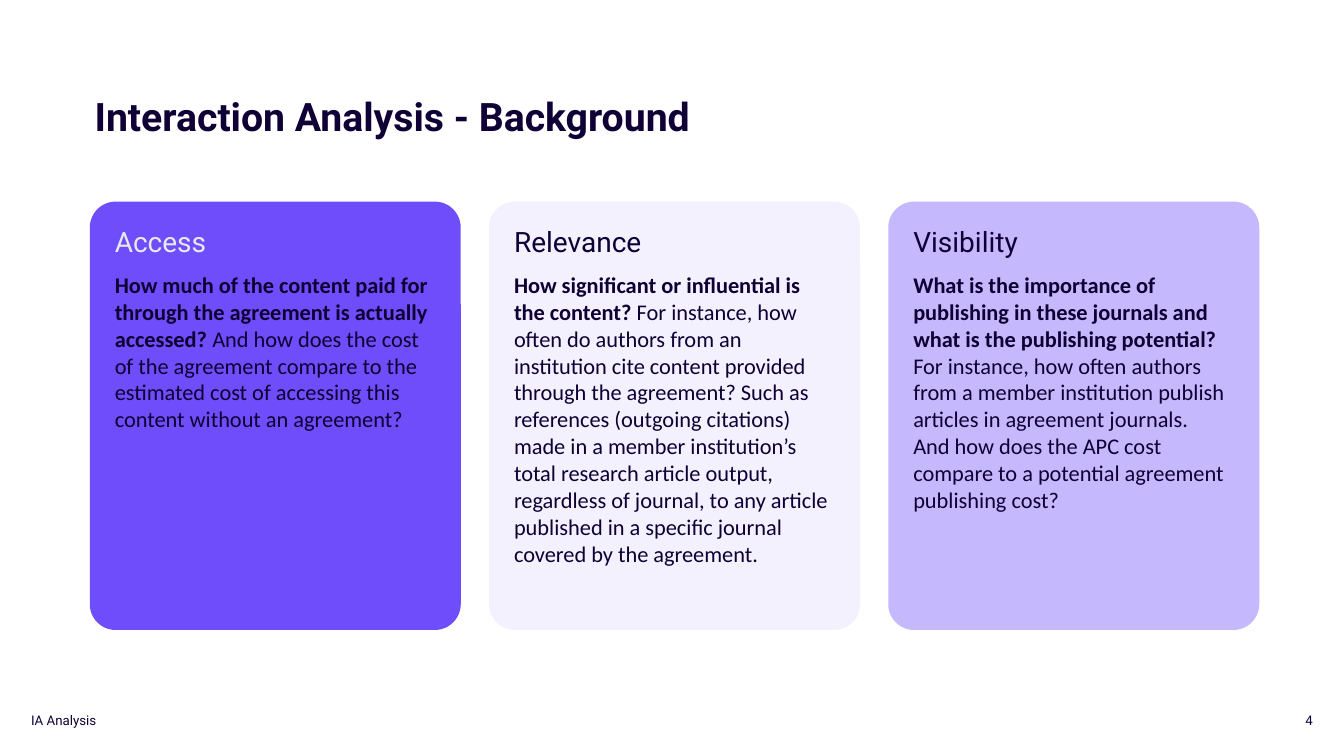
"""Build the Interaction Analysis background slide with three question cards."""
from pptx import Presentation
from pptx.dml.color import RGBColor
from pptx.enum.shapes import MSO_SHAPE
from pptx.enum.text import MSO_ANCHOR, PP_ALIGN
from pptx.util import Inches, Pt

COLORS = {
    "ink": "0F0035", "body": "0F0034", "pale": "E7E9EA",
    "violet": "6F4DFA", "mist": "F3F1FE", "lilac": "C5B8FD",
}
TITLE = "Interaction Analysis - Background"
FOOTER = "IA Analysis"
PAGE = "4"
CARDS = [
    ("Access", "violet", "pale",
     "How much of the content paid for through the agreement is actually accessed? ",
     "And how does the cost of the agreement compare to the estimated cost of "
     "accessing this content without an agreement?"),
    ("Relevance", "mist", "ink",
     "How significant or influential is the content?",
     " For instance, how often do authors from an institution cite content provided "
     "through the agreement? Such as references (outgoing citations) made in a member "
     "institution’s total research article output, regardless of journal, to any "
     "article published in a specific journal covered by the agreement."),
    ("Visibility", "lilac", "ink",
     "What is the importance of publishing in these journals and what is the "
     "publishing potential?",
     " For instance, how often authors from a member institution publish articles in "
     "agreement journals. And how does the APC cost compare to a potential agreement "
     "publishing cost?"),
]
FORMATS = {
    "title": {"name": "Roboto", "size": Pt(28), "bold": True},
    "heading": {"name": "Roboto", "size": Pt(20), "bold": False},
    "question": {"name": "Calibri", "size": Pt(16), "bold": True},
    "detail": {"name": "Calibri", "size": Pt(16), "bold": False},
    "footer": {"name": "Roboto", "size": Pt(9.5), "bold": False},
}
WIDTH, HEIGHT = 13.33, 7.5
LEFT, TOP, CARD_W, CARD_H, GAP = 0.89, 2, 3.68, 4.25, 0.28
INSET = 0.15


def rgb(key):
    return RGBColor.from_string(COLORS[key])


def add_text(s, box, runs, anchor=MSO_ANCHOR.TOP, align=PP_ALIGN.LEFT, spacing=None):
    tf = s.shapes.add_textbox(*map(Inches, box)).text_frame
    tf.word_wrap = True
    tf.vertical_anchor = anchor
    p = tf.paragraphs[0]
    p.alignment, p.line_spacing = align, spacing
    for text, style, color in runs:
        r = p.add_run()
        r.text = text
        for name, value in FORMATS[style].items():
            setattr(r.font, name, value)
        r.font.color.rgb = rgb(color)


def add_card(s, column, card):
    heading, fill, heading_color, question, detail = card
    x = LEFT + column * (CARD_W + GAP)
    sp = s.shapes.add_shape(MSO_SHAPE.ROUNDED_RECTANGLE,
                            *map(Inches, (x, TOP, CARD_W, CARD_H)))
    sp.adjustments[0] = 0.07
    sp.shadow.inherit = False
    sp.fill.solid()
    sp.fill.fore_color.rgb = rgb(fill)
    sp.line.fill.background()
    add_text(s, (x + INSET, TOP + 0.64, 3.33, 3.33),
             [(question, "question", "body"), (detail, "detail", "body")])
    add_text(s, (x + INSET, TOP + 0.18, 3.47, 0.44),
             [(heading, "heading", heading_color)])


def main():
    prs = Presentation()
    prs.slide_width, prs.slide_height = Inches(WIDTH), Inches(HEIGHT)
    s = prs.slides.add_slide(prs.slide_layouts[6])
    margin, footer_y = 0.21, HEIGHT - 0.55
    add_text(s, (margin, footer_y, 2.17, 0.4), [(FOOTER, "footer", "ink")],
             MSO_ANCHOR.MIDDLE)
    add_text(s, (WIDTH - margin - 3, footer_y, 3, 0.4), [(PAGE, "footer", "ink")],
             MSO_ANCHOR.MIDDLE, PP_ALIGN.RIGHT)
    for column, card in enumerate(CARDS):
        add_card(s, column, card)
    add_text(s, (0.84, 0.57, 6.54, 0.87), [(TITLE, "title", "ink")],
             MSO_ANCHOR.BOTTOM, spacing=0.9)
    prs.save("out.pptx")


if __name__ == "__main__":
    main()
